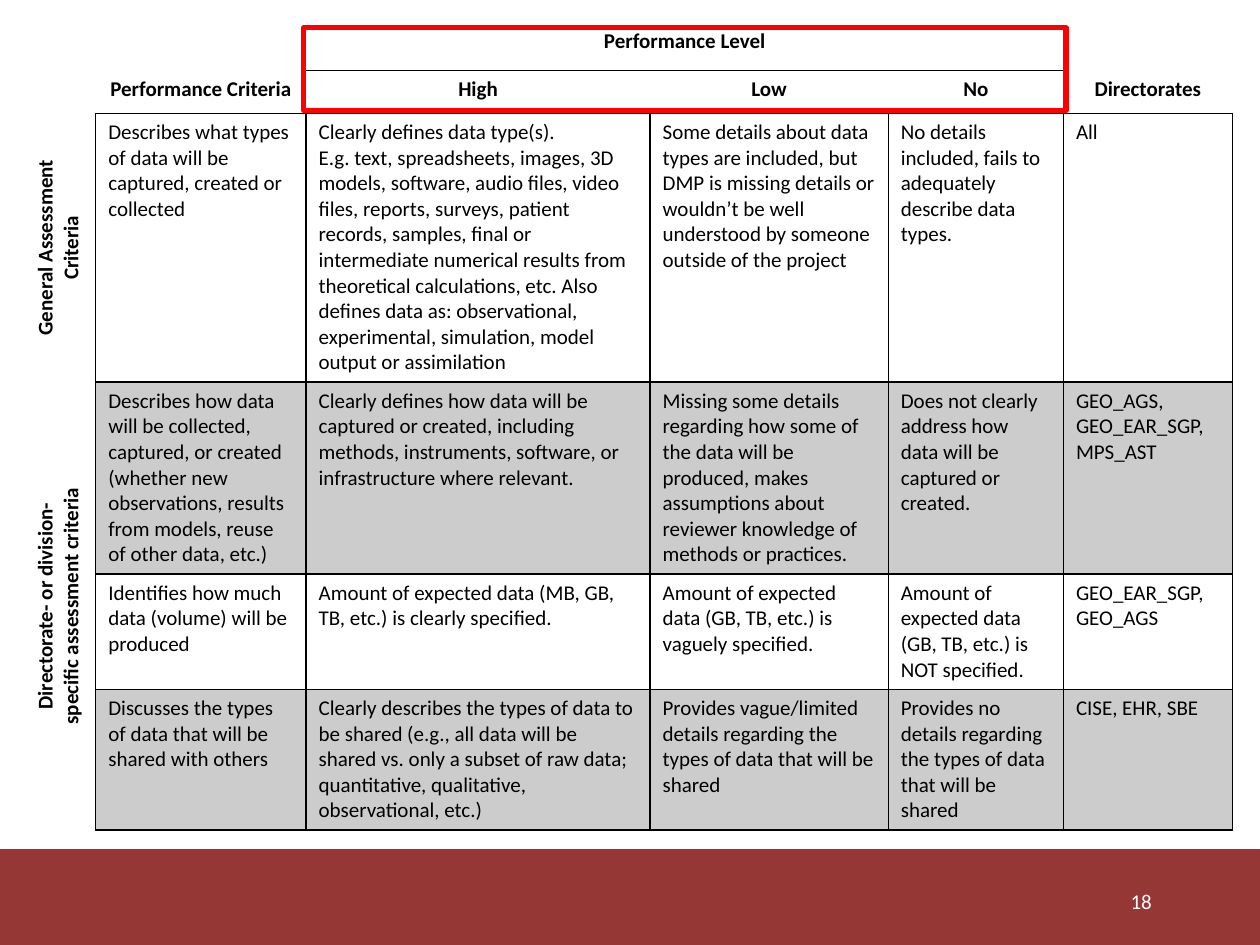
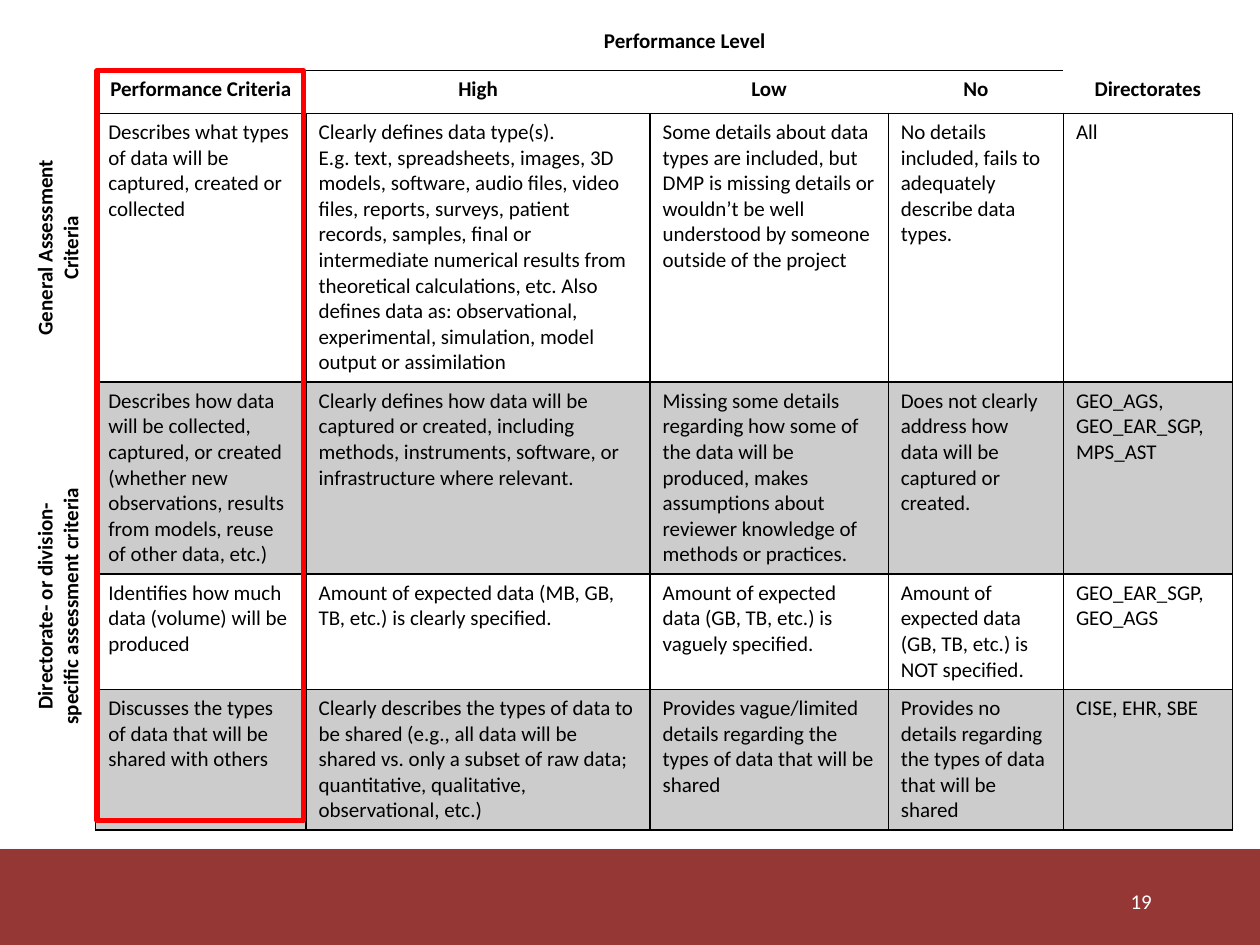
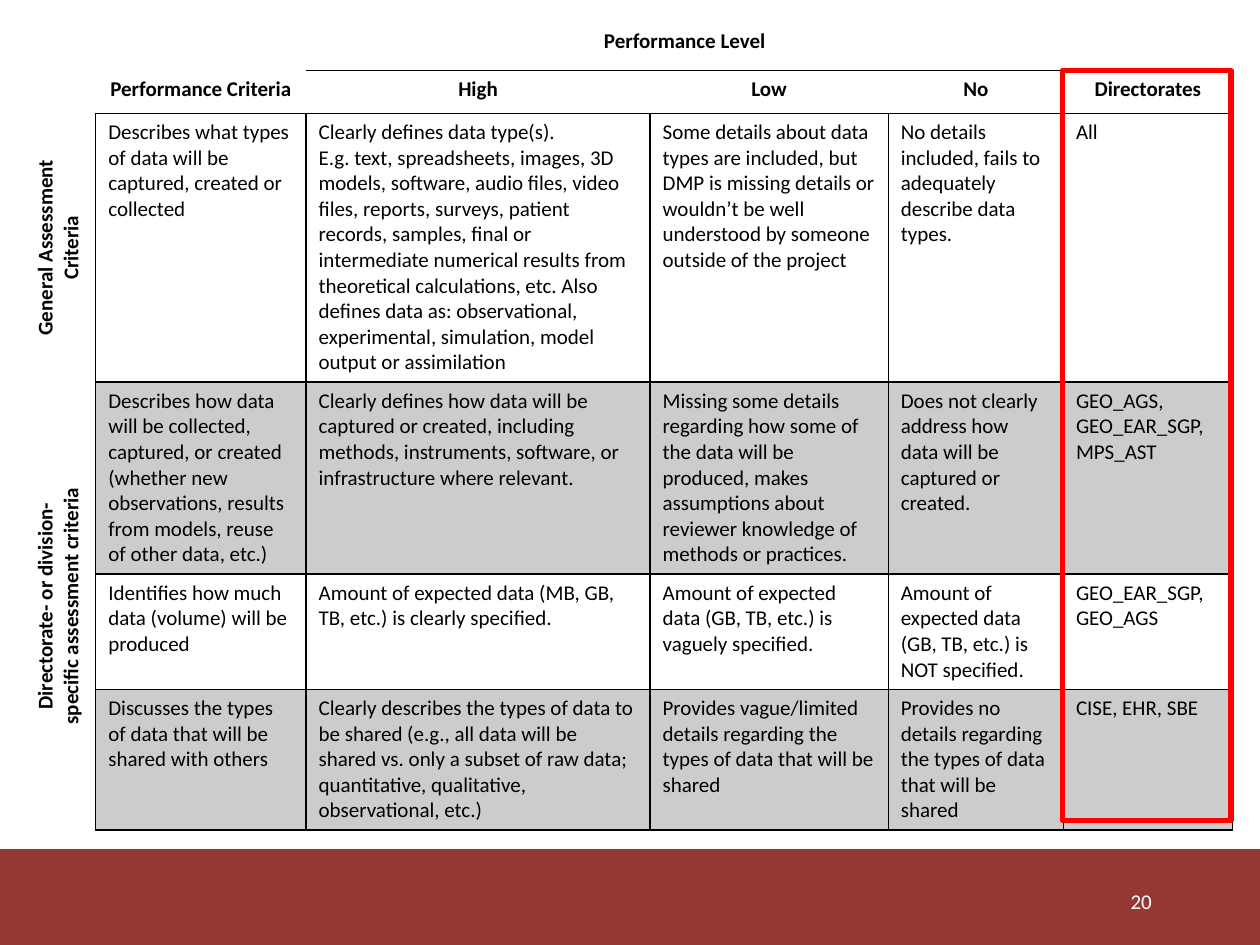
"""Build three slides that walk through a data management plan rubric."""

import lxml.etree
import pptx
import pptx.dml.color
import pptx.enum.shapes
import pptx.enum.text
import pptx.oxml.ns
import pptx.util

Pt = pptx.util.Pt
ALIGN = pptx.enum.text.PP_ALIGN
MIDDLE = pptx.enum.text.MSO_ANCHOR.MIDDLE
RECTANGLE = pptx.enum.shapes.MSO_SHAPE.RECTANGLE

BLACK, WHITE, MAROON, RED = "000000", "FFFFFF", "953735", "FF0000"
FONT, FONT_SIZE = "Calibri", 12

RUBRIC = [
    ["", "", "Performance Level", "", "", ""],
    ["", "Performance Criteria", "High", "Low", "No", "Directorates"],
    [
        "General Assessment\nCriteria",
        "Describes what types of data will be captured, created or collected",
        "Clearly defines data type(s).\nE.g. text, spreadsheets, images, 3D models, software, "
        "audio files, video files, reports, surveys, patient records, samples, final or "
        "intermediate numerical results from theoretical calculations, etc. Also defines data "
        "as: observational, experimental, simulation, model output or assimilation",
        "Some details about data types are included, but DMP is missing details or wouldn’t be "
        "well understood by someone outside of the project",
        "No details included, fails to adequately describe data types.",
        "All",
    ],
    [
        "Directorate- or division-\nspecific assessment criteria",
        "Describes how data will be collected, captured, or created (whether new observations, "
        "results from models, reuse of other data, etc.)",
        "Clearly defines how data will be captured or created, including methods, instruments, "
        "software, or infrastructure where relevant.",
        "Missing some details regarding how some of the data will be produced, makes "
        "assumptions about reviewer knowledge of methods or practices.",
        "Does not clearly address how data will be captured or created.",
        "GEO_AGS, GEO_EAR_SGP, MPS_AST",
    ],
    [
        "",
        "Identifies how much data (volume) will be produced",
        "Amount of expected data (MB, GB, TB, etc.) is clearly specified.",
        "Amount of expected data (GB, TB, etc.) is vaguely specified.",
        "Amount of expected data (GB, TB, etc.) is NOT specified.",
        "GEO_EAR_SGP, GEO_AGS",
    ],
    [
        "",
        "Discusses the types of data that will be shared with others",
        "Clearly describes the types of data to be shared (e.g., all data will be shared vs. "
        "only a subset of raw data; quantitative, qualitative, observational, etc.)",
        "Provides vague/limited details regarding the types of data that will be shared",
        "Provides no details regarding the types of data that will be shared",
        "CISE, EHR, SBE",
    ],
]
HEADER_ROWS = 2
LEVEL_COLUMNS = range(2, 5)
MERGES = [((0, 2), (0, 4)), ((3, 0), (5, 0))]
COLUMN_WIDTHS = [39.6, 120.2, 196.6, 136.1, 100.1, 96.5]
ROW_HEIGHTS = [33.1, 24.5, 153.6, 109.7, 65.9, 80.4]
TABLE_LEFT, TABLE_TOP = 15.1, 7.2

BAND_BOX = (0, 485.3, 720, 54.7)
NUMBER_BOX = (497.5, 500.4, 167.8, 28.8)
SLIDES = [
    (18, (173.5, 15.8, 435.6, 47.5)),
    (19, (55.4, 40.3, 118.1, 428.4)),
    (20, (607, 40.3, 96.5, 428.4)),
]


def color(hex_string):
    return pptx.dml.color.RGBColor.from_string(hex_string)


def points(box):
    return [Pt(length) for length in box]


def add_tag(parent, tag, **attributes):
    return lxml.etree.SubElement(parent, pptx.oxml.ns.qn(tag), attributes)


def apply_format(target, values):
    for name, value in values.items():
        setattr(target, name, value)


def write(paragraph, text, text_color=BLACK, bold=False, alignment=ALIGN.LEFT):
    size = str(FONT_SIZE * 100)
    paragraph.text = text
    paragraph.alignment = alignment
    for run in paragraph.runs:
        apply_format(run.font, {"name": FONT, "size": Pt(FONT_SIZE), "bold": bold})
        run.font.color.rgb = color(text_color)
    for line_break in paragraph._p.findall(pptx.oxml.ns.qn("a:br")):
        add_tag(line_break, "a:rPr", sz=size)
    if not text:
        add_tag(paragraph._p, "a:endParaRPr", sz=size)


def cell_sides(row, column):
    """Name the sides of a cell that carry a line."""
    if row >= HEADER_ROWS:
        return "LRTB" if column else "R"
    if row == 0:
        return "B" if column in LEVEL_COLUMNS else ""
    if column in LEVEL_COLUMNS:
        return "TB"
    return "B" if column else ""


def cell_fill(row, column):
    """Give a cell's colour and opacity in percent, or None."""
    if row >= HEADER_ROWS and column == 0:
        return WHITE, 100
    if row == 1:
        return WHITE, 20
    return (BLACK, 20) if row in (3, 5) else None


def fill_cell(cell, fill):
    if fill is None:
        cell.fill.background()
        return
    hex_string, opacity = fill
    cell.fill.solid()
    cell.fill.fore_color.rgb = color(hex_string)
    if opacity < 100:
        source = cell._tc.tcPr.find(".//" + pptx.oxml.ns.qn("a:srgbClr"))
        add_tag(source, "a:alpha", val=str(opacity * 1000))


def draw_borders(cell, sides):
    properties = cell._tc.get_or_add_tcPr()
    for index, side in enumerate("LRTB"):
        line = add_tag(properties, f"a:ln{side}", w=str(Pt(1)))
        if side in sides:
            add_tag(add_tag(line, "a:solidFill"), "a:srgbClr", val=BLACK)
        else:
            add_tag(line, "a:noFill")
        properties.insert(index, line)


def add_rubric(slide):
    frame = slide.shapes.add_table(
        len(ROW_HEIGHTS), len(COLUMN_WIDTHS),
        *points((TABLE_LEFT, TABLE_TOP, sum(COLUMN_WIDTHS), sum(ROW_HEIGHTS))))
    table = frame.table
    apply_format(table, {"first_row": False, "horz_banding": False})
    for column, width in zip(table.columns, COLUMN_WIDTHS):
        column.width = Pt(width)
    for row, height in zip(table.rows, ROW_HEIGHTS):
        row.height = Pt(height)
    for row, texts in enumerate(RUBRIC):
        for column, text in enumerate(texts):
            cell = table.cell(row, column)
            heading = row < HEADER_ROWS or column == 0
            write(cell.text_frame.paragraphs[0], text, bold=heading,
                  alignment=ALIGN.CENTER if heading else ALIGN.LEFT)
            fill_cell(cell, cell_fill(row, column))
            draw_borders(cell, cell_sides(row, column))
            if row == 0 or column == 0:
                cell.vertical_anchor = MIDDLE
            if row >= HEADER_ROWS and column == 0:
                cell._tc.tcPr.set("vert", "vert270")
    for first, last in MERGES:
        table.cell(*first).merge(table.cell(*last))


def add_highlight(slide, box):
    shape = slide.shapes.add_shape(RECTANGLE, *points(box))
    shape.shadow.inherit = False
    shape.fill.background()
    shape.line.color.rgb = color(RED)
    shape.line.width = Pt(3)
    add_tag(shape.line._get_or_add_ln(), "a:round")


def add_number(slide, number):
    text_frame = slide.shapes.add_textbox(*points(NUMBER_BOX)).text_frame
    apply_format(text_frame, {"word_wrap": True, "vertical_anchor": MIDDLE})
    write(text_frame.paragraphs[0], str(number), WHITE, alignment=ALIGN.RIGHT)


def move_band_to_layout(slide):
    """Draw the footer band and hand it to the layout that all slides share."""
    band = slide.shapes.add_shape(RECTANGLE, *points(BAND_BOX))
    band.fill.solid()
    band.fill.fore_color.rgb = color(MAROON)
    band.line.fill.background()
    band.shadow.inherit = False
    effects = band._element.spPr.find(pptx.oxml.ns.qn("a:effectLst"))
    shadow = add_tag(effects, "a:outerShdw", blurRad=str(Pt(3.1)), dist=str(Pt(1.8)),
                     dir="5400000", rotWithShape="0")
    add_tag(add_tag(shadow, "a:srgbClr", val=BLACK), "a:alpha", val="35000")
    slide.slide_layout.shapes._spTree.append(band._element)


def main():
    presentation = pptx.Presentation()
    apply_format(presentation, {"slide_width": Pt(720), "slide_height": Pt(540)})
    blank_layout = presentation.slide_layouts[6]
    for number, highlight_box in SLIDES:
        slide = presentation.slides.add_slide(blank_layout)
        add_number(slide, number)
        add_rubric(slide)
        add_highlight(slide, highlight_box)
    move_band_to_layout(presentation.slides[0])
    presentation.save("out.pptx")


if __name__ == "__main__":
    main()
